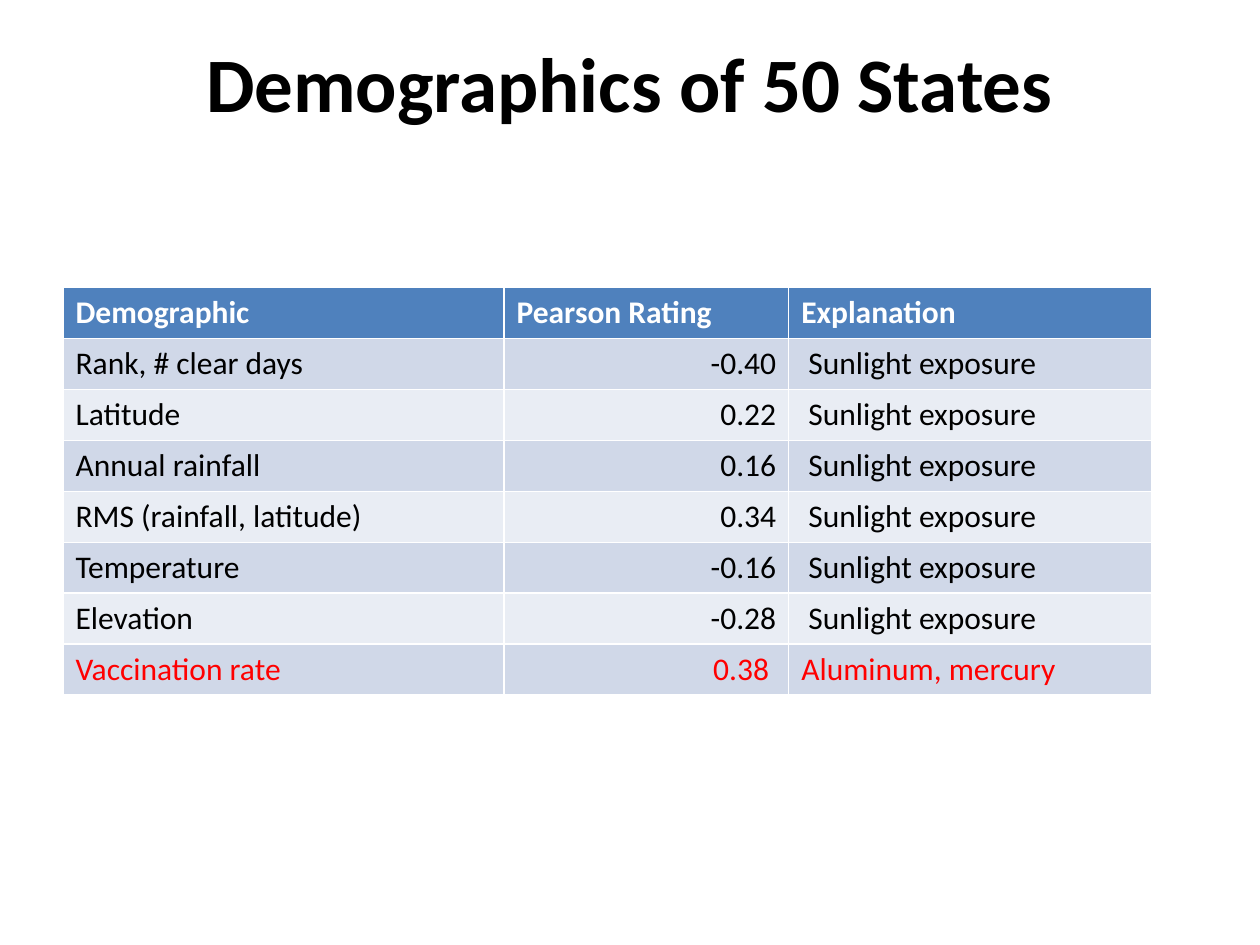
from pptx import Presentation
from pptx.dml.color import RGBColor
from pptx.enum.text import MSO_ANCHOR, PP_ALIGN
from pptx.util import Inches, Pt

CENTER, LEFT, RIGHT = PP_ALIGN.CENTER, PP_ALIGN.LEFT, PP_ALIGN.RIGHT
MIDDLE = MSO_ANCHOR.MIDDLE
BLACK = RGBColor(0x00, 0x00, 0x00)
WHITE = RGBColor(0xFF, 0xFF, 0xFF)
RED = RGBColor(0xFF, 0x00, 0x00)
HEADER_BLUE = RGBColor(0x4F, 0x81, 0xBD)
BANDS = [RGBColor(0xE9, 0xED, 0xF4), RGBColor(0xD0, 0xD8, 0xE8)]

SUNLIGHT = " Sunlight exposure"
ROWS = [
    ("Demographic", "Pearson Rating", "Explanation"),
    ("Rank, # clear days", "-0.40", SUNLIGHT),
    ("Latitude", "0.22", SUNLIGHT),
    ("Annual rainfall", "0.16", SUNLIGHT),
    ("RMS (rainfall, latitude)", "0.34", SUNLIGHT),
    ("Temperature", "-0.16", SUNLIGHT),
    ("Elevation", "-0.28", SUNLIGHT),
    ("Vaccination rate", "0.38 ", "Aluminum, mercury"),
]
COL_WIDTHS = [3.5, 2.26, 2.88]
ROW_HEIGHT = 3.24 / len(ROWS)
MARGIN = 0.5


def style_paragraph(p, size, color, bold, align):
    p.alignment = align
    p.font.name = "Calibri"
    p.font.size = Pt(size)
    p.font.bold = bold
    p.font.color.rgb = color


prs = Presentation()
prs.slide_width, prs.slide_height = Inches(10), Inches(7.5)
s = prs.slides.add_slide(prs.slide_layouts[6])

# Title
title = s.shapes.add_textbox(Inches(MARGIN), Inches(0.02), Inches(10 - 2 * MARGIN), Inches(1.25))
tf = title.text_frame
tf.word_wrap = True
tf.vertical_anchor = MIDDLE
tf.text = "Demographics of 50 States"
style_paragraph(tf.paragraphs[0], 44, BLACK, True, CENTER)

# Table: the default style supplies the white grid lines
table = s.shapes.add_table(
    len(ROWS), len(COL_WIDTHS), Inches(MARGIN), Inches(2.28),
    Inches(sum(COL_WIDTHS)), Inches(ROW_HEIGHT * len(ROWS))).table
for column, width in zip(table.columns, COL_WIDTHS):
    column.width = Inches(width)

for i, row in enumerate(ROWS):
    header = i == 0
    table.rows[i].height = Inches(ROW_HEIGHT)
    if header:
        color = WHITE
    else:
        color = RED if row[0] == "Vaccination rate" else BLACK
    for j, text in enumerate(row):
        cell = table.cell(i, j)
        cell.fill.solid()
        cell.fill.fore_color.rgb = HEADER_BLUE if header else BANDS[i % 2]
        cell.text = text
        align = RIGHT if j == 1 and not header else LEFT
        style_paragraph(cell.text_frame.paragraphs[0], 18, color, header, align)

prs.save("out.pptx")
